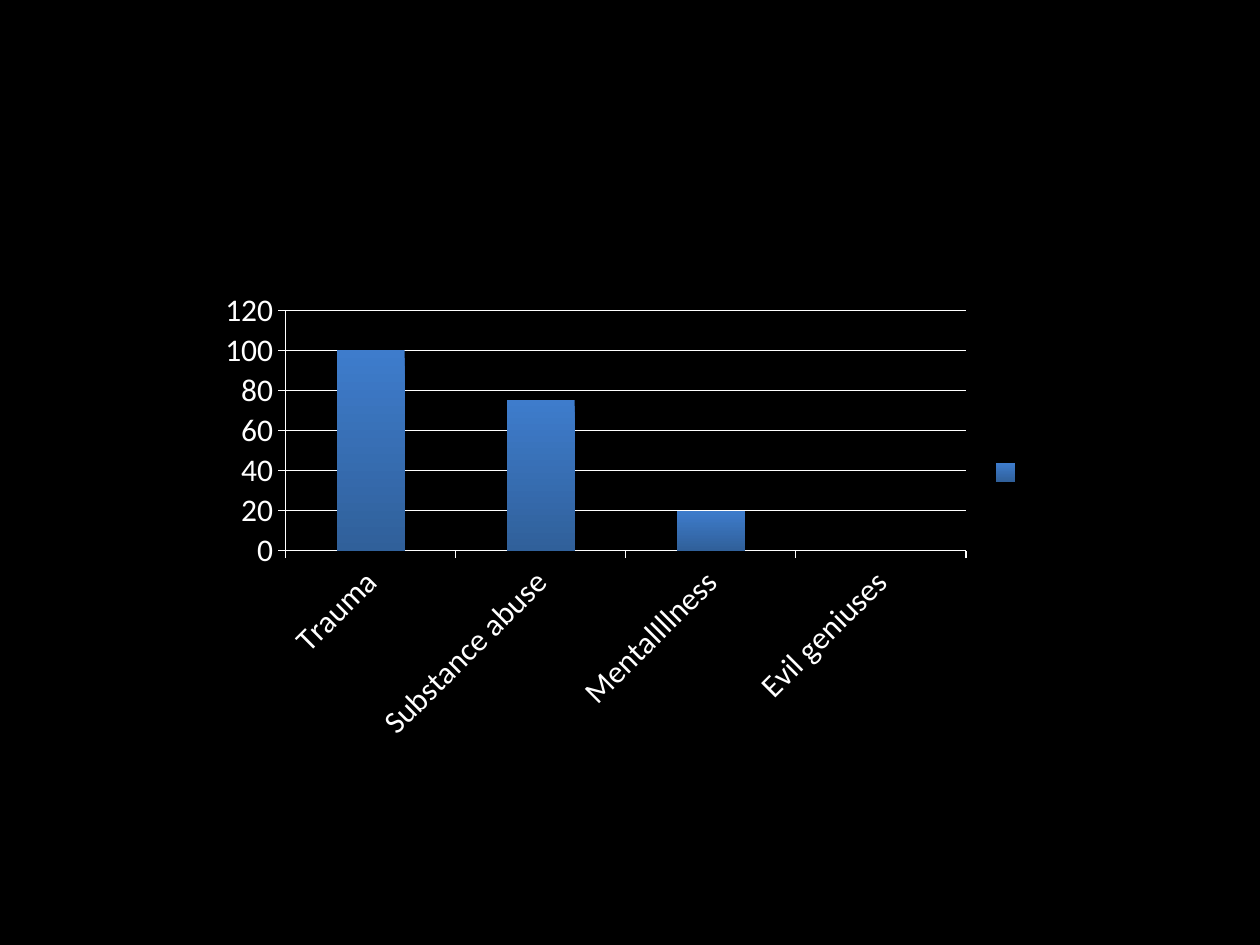
"""Build a slide with a column chart of causes on a black background."""
from lxml.etree import SubElement
from pptx import Presentation
from pptx.chart.data import CategoryChartData
from pptx.dml.color import RGBColor
from pptx.enum.chart import XL_CHART_TYPE, XL_LEGEND_POSITION, XL_TICK_MARK
from pptx.oxml.ns import qn
from pptx.util import Pt

PX = 914400 // 126
WHITE = "FFFFFF"


def rgb(value):
    return RGBColor.from_string(value)


prs = Presentation()
prs.slide_width, prs.slide_height = 1260 * PX, 945 * PX
s = prs.slides.add_slide(prs.slide_layouts[6])
s.background.fill.solid()
s.background.fill.fore_color.rgb = rgb("000000")

data = CategoryChartData()
data.categories = ["Trauma", "Substance abuse", "MentalIllness", "Evil geniuses"]
data.add_series(" ", [100, 75, 20, 0])
box = [n * PX for n in (210, 193, 840, 559)]
chart = s.shapes.add_chart(XL_CHART_TYPE.COLUMN_CLUSTERED, *box, data).chart
chart.font.size = Pt(18)
chart.font.name = "Calibri"
chart.font.color.rgb = rgb(WHITE)
chart.has_title = True
chart.chart_title.text_frame.text = " "
chart.has_legend = True
chart.legend.position = XL_LEGEND_POSITION.RIGHT
chart.legend.include_in_layout = False

plot = chart.plots[0]
plot.gap_width = 150
plot.vary_by_categories = False
fill = plot.series[0].format.fill
fill.gradient()
fill.gradient_angle = 270
for stop, color in zip(fill.gradient_stops, ("3E7CCC", "30609A")):
    stop.color.rgb = rgb(color)

for axis in (chart.category_axis, chart.value_axis):
    axis.major_tick_mark = XL_TICK_MARK.OUTSIDE
    axis.minor_tick_mark = XL_TICK_MARK.NONE
    axis.format.line.color.rgb = rgb(WHITE)
    axis.format.line.width = Pt(0.75)
chart.value_axis.minimum_scale = 0
chart.value_axis.maximum_scale = 120
chart.value_axis.major_unit = 20
grid = chart.value_axis.major_gridlines.format.line
grid.color.rgb = rgb(WHITE)
grid.width = Pt(0.75)
labels = chart.category_axis.tick_labels
labels.font.size = Pt(18)
labels.font.color.rgb = rgb(WHITE)
body = chart.category_axis._element.find(f"{qn('c:txPr')}/{qn('a:bodyPr')}")
body.set("rot", "-2700000")

area = chart._chartSpace.chart.plotArea
for old in area.findall(qn("c:layout")):
    area.remove(old)
layout = SubElement(area, qn("c:layout"))
area.insert(0, layout)
manual = SubElement(layout, qn("c:manualLayout"))
for tag, val in (("layoutTarget", "inner"), ("xMode", "edge"), ("yMode", "edge"),
                 ("x", 0.09), ("y", 0.21), ("w", 0.81), ("h", 0.43)):
    SubElement(manual, qn(f"c:{tag}")).set("val", str(val))

prs.save("out.pptx")
